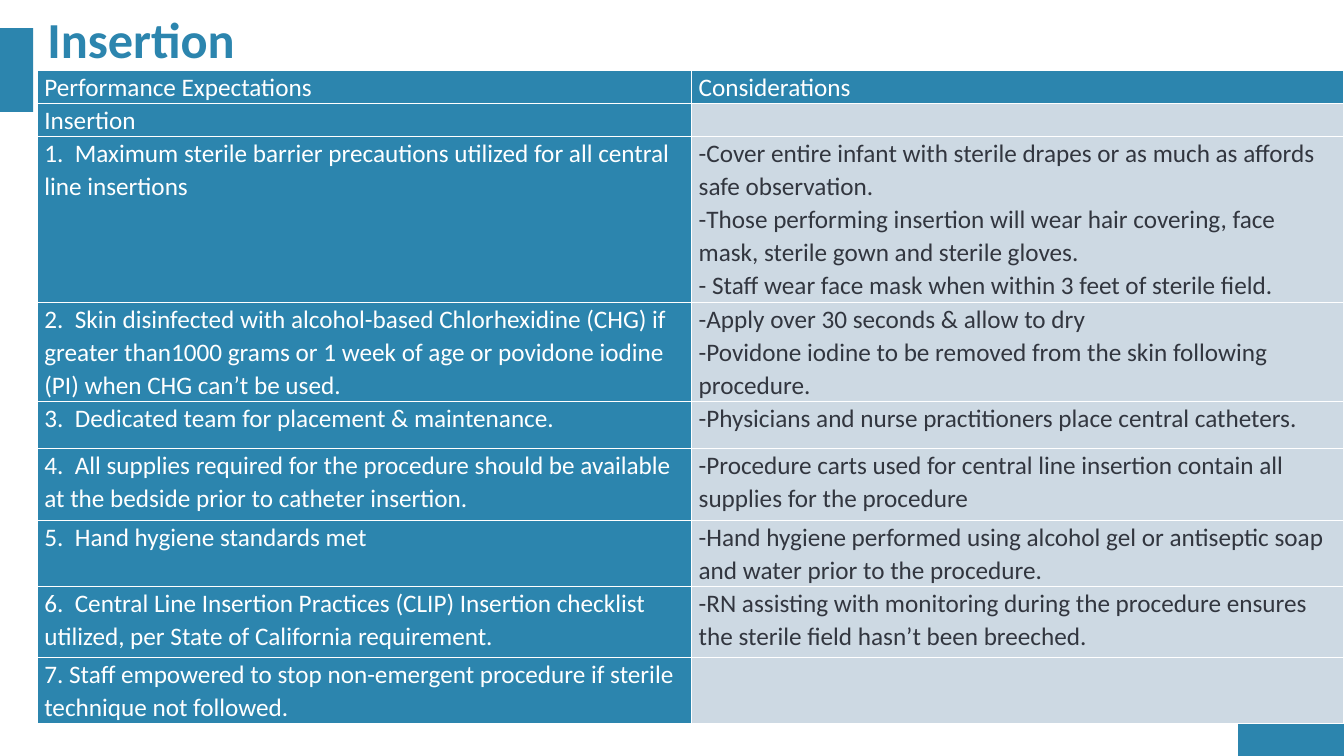
from typing import NamedTuple

from lxml import etree
from pptx import Presentation
from pptx.dml.color import RGBColor
from pptx.enum.shapes import MSO_SHAPE
from pptx.enum.text import MSO_ANCHOR, MSO_AUTO_SIZE, PP_ALIGN
from pptx.oxml.ns import qn
from pptx.util import Inches, Pt

RECTANGLE = MSO_SHAPE.RECTANGLE
MIDDLE = MSO_ANCHOR.MIDDLE
NO_AUTOFIT = MSO_AUTO_SIZE.NONE
LEFT = PP_ALIGN.LEFT

BLUE, PALE, WHITE, DARK = "2C85AE", "CDD9E3", "FFFFFF", "32363F"
FONT = "Calibri"


class Bar(NamedTuple):
    left: float
    top: float
    width: float
    height: float


class Row(NamedTuple):
    height: float
    expectation: str
    considerations: list[str]


BARS = [Bar(12.28, 7.12, 1.05, 0.38), Bar(0, 0.28, 0.33, 0.83)]
COLUMN_WIDTHS = [6.49, 6.47]
ROWS = [
    Row(0.31, "Performance Expectations", ["Considerations"]),
    Row(0.31, "Insertion", []),
    Row(1.65, "1.  Maximum sterile barrier precautions utilized for all central line insertions", [
        "-Cover entire infant with sterile drapes or as much as affords safe observation.",
        "-Those performing insertion will wear hair covering, face mask, sterile gown and sterile gloves.",
        "- Staff wear face mask when within 3 feet of sterile field."]),
    Row(0.96, "2.  Skin disinfected with alcohol-based Chlorhexidine (CHG) if greater than1000 grams "
        "or 1 week of age or povidone iodine (PI) when CHG can’t be used.", [
            "-Apply over 30 seconds & allow to dry",
            "-Povidone iodine to be removed from the skin following procedure."]),
    Row(0.47, "3.  Dedicated team for placement & maintenance.", [
        "-Physicians and nurse practitioners place central catheters."]),
    Row(0.71, "4.  All supplies required for the procedure should be available at the bedside "
        "prior to catheter insertion.", [
            "-Procedure carts used for central line insertion contain all supplies for the procedure"]),
    Row(0.63, "5.  Hand hygiene standards met", [
        "-Hand hygiene performed using alcohol gel or antiseptic soap and water prior to the procedure."]),
    Row(0.71, "6.  Central Line Insertion Practices (CLIP) Insertion checklist utilized, "
        "per State of California requirement.", [
            "-RN assisting with monitoring during the procedure ensures the sterile field "
            "hasn’t been breeched."]),
    Row(0.63, "7. Staff empowered to stop non-emergent procedure if sterile technique not followed.", []),
]


def color(value: str) -> RGBColor:
    return RGBColor.from_string(value)


def apply(target, formats: dict) -> None:
    for name, value in formats.items():
        setattr(target, name, value)


def add_text(para, text: str, size: float, ink: str, bold: bool, spacing: float) -> None:
    apply(para, {"alignment": LEFT, "line_spacing": spacing})
    span = para.add_run()
    span.text = text
    apply(span.font, {"name": FONT, "size": Pt(size), "bold": bold})
    span.font.color.rgb = color(ink)


def add_bar(page, bar: Bar) -> None:
    shape = page.shapes.add_shape(RECTANGLE, *map(Inches, bar))
    shape.shadow.inherit = False
    shape.fill.solid()
    shape.fill.fore_color.rgb = color(BLUE)
    shape.line.fill.background()


def add_borders(cell) -> None:
    """Draw thin white lines; they must come before the fill in the cell's XML."""
    properties = cell._tc.get_or_add_tcPr()
    for side in ("lnL", "lnR", "lnT", "lnB"):
        line = etree.SubElement(properties, qn(f"a:{side}"), w=str(Pt(1)))
        fill = etree.SubElement(line, qn("a:solidFill"))
        etree.SubElement(fill, qn("a:srgbClr"), val=WHITE)


def fill_cell(cell, lines: list[str], background: str, ink: str) -> None:
    apply(cell, {"margin_left": Inches(0.07), "margin_right": Inches(0.07),
                 "margin_top": 0, "margin_bottom": 0})
    add_borders(cell)
    cell.fill.solid()
    cell.fill.fore_color.rgb = color(background)
    frame = cell.text_frame
    for index, text in enumerate(lines):
        para = frame.add_paragraph() if index else frame.paragraphs[0]
        add_text(para, text, 18, ink, False, 1.07)


def add_checklist(page) -> None:
    height = sum(row.height for row in ROWS)
    table = page.shapes.add_table(
        len(ROWS), len(COLUMN_WIDTHS), Inches(0.37), Inches(0.7),
        Inches(sum(COLUMN_WIDTHS)), Inches(height)).table
    for column, width in zip(table.columns, COLUMN_WIDTHS):
        column.width = Inches(width)
    for index, row in enumerate(ROWS):
        table.rows[index].height = Inches(row.height)
        fill_cell(table.cell(index, 0), [row.expectation], BLUE, WHITE)
        background, ink = (PALE, DARK) if index else (BLUE, WHITE)
        fill_cell(table.cell(index, 1), row.considerations, background, ink)


def format_title(title) -> None:
    apply(title, {"left": Inches(0.37), "top": 0, "width": Inches(12.6), "height": Inches(0.83)})
    apply(title.text_frame, {"vertical_anchor": MIDDLE, "auto_size": NO_AUTOFIT, "word_wrap": True})
    add_text(title.text_frame.paragraphs[0], "Insertion", 36, BLUE, True, 0.9)


def main() -> None:
    deck = Presentation()
    apply(deck, {"slide_width": Inches(13.33), "slide_height": Inches(7.5)})
    page = deck.slides.add_slide(deck.slide_layouts[5])
    for bar in BARS:
        add_bar(page, bar)
    format_title(page.shapes.title)
    add_checklist(page)
    deck.save("out.pptx")


if __name__ == "__main__":
    main()
